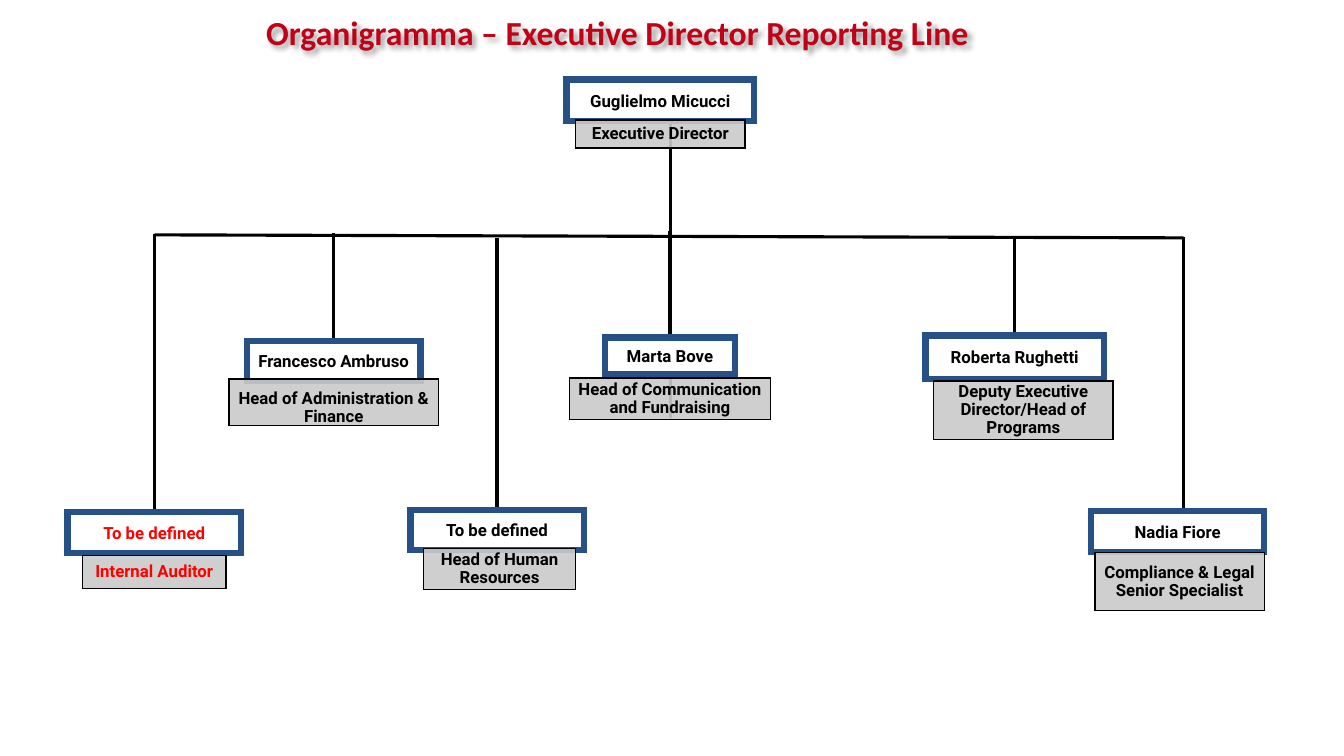
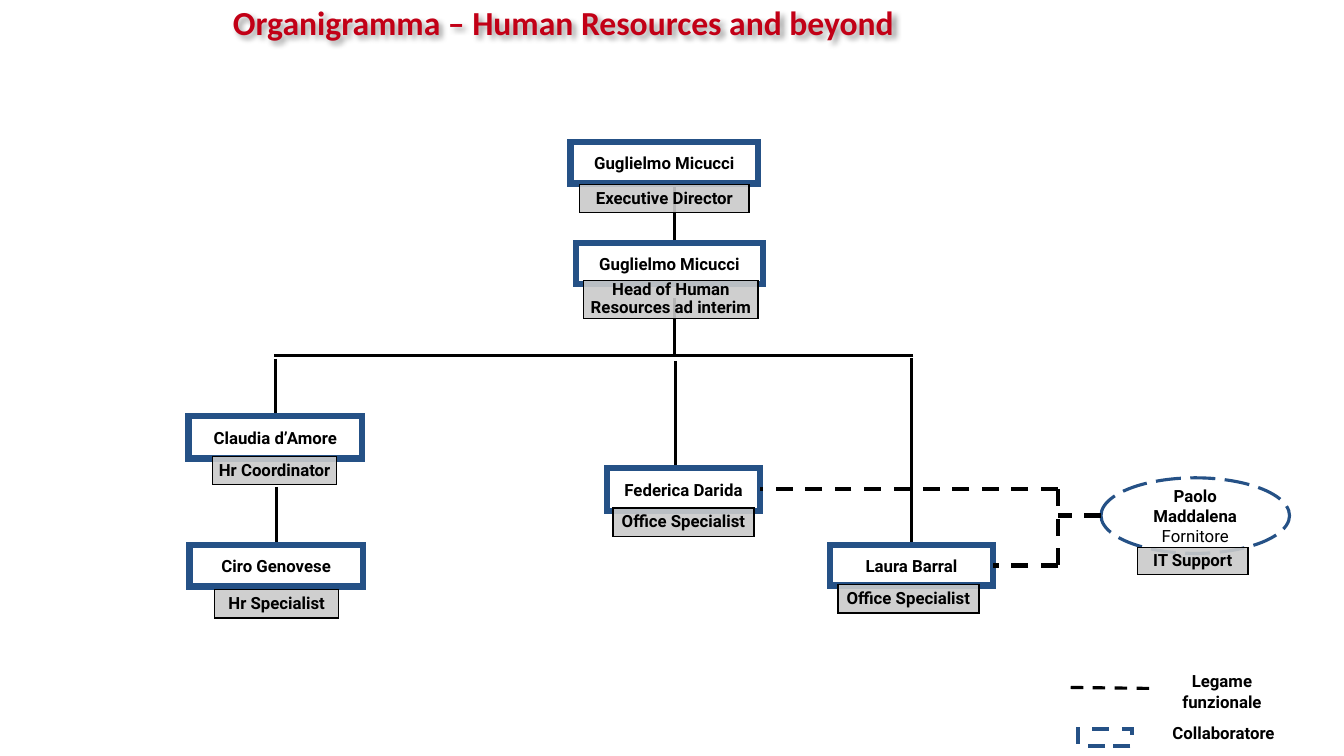
from lxml.etree import SubElement
from pptx import Presentation
from pptx.dml.color import RGBColor
from pptx.enum.dml import MSO_LINE as Dash
from pptx.enum.shapes import MSO_CONNECTOR as Connector, MSO_SHAPE as Preset
from pptx.enum.text import MSO_ANCHOR as Anchor, MSO_AUTO_SIZE as AutoSize, PP_ALIGN as Align
from pptx.oxml.ns import qn
from pptx.util import Inches, Pt

# Shared style
RED = RGBColor(0xC2, 0x00, 0x16)
ALERT = RGBColor(0xFF, 0x00, 0x00)
BLUE = RGBColor(0x25, 0x51, 0x86)
GREY = RGBColor(0xCA, 0xCA, 0xCA)
BLACK = RGBColor(0x00, 0x00, 0x00)
WHITE = RGBColor(0xFF, 0xFF, 0xFF)
TITLE_FONT, BODY_FONT = "Calibri", "Roboto"
TOP, RIGHT = 0, 3
CENTRED = 0.04  # a drop this close to a box's middle is joined to it

# Content: cards are (name, name box, role, role box); boxes are left, top, width, height.
# Drops are key: (x, start y) and run down to the card's top.
DIRECTOR_PAGE = {
    "title": ("Organigramma – Executive Director Reporting Line", (2.54, 0.09, 10, 0.5)),
    "cards": {
        "director": ("Guglielmo Micucci", (5.62, 0.79, 1.86, 0.41),
                     "Executive Director", (5.71, 1.19, 1.68, 0.28)),
        "auditor": ("To be defined", (0.67, 5.08, 1.72, 0.41),
                    "Internal Auditor", (0.82, 5.51, 1.42, 0.33)),
        "finance": ("Francesco Ambruso", (2.45, 3.38, 1.72, 0.4),
                    "Head of Administration & Finance", (2.27, 3.76, 2.08, 0.46)),
        "people": ("To be defined", (4.07, 5.06, 1.72, 0.4),
                   "Head of Human Resources", (4.2, 5.44, 1.51, 0.41)),
        "communication": ("Marta Bove", (6, 3.35, 1.29, 0.36),
                          "Head of Communication and Fundraising", (5.65, 3.75, 1.99, 0.41)),
        "programs": ("Roberta Rughetti", (9.18, 3.33, 1.77, 0.43),
                     "Deputy Executive Director/Head of Programs", (9.26, 3.78, 1.78, 0.58)),
        "compliance": ("Nadia Fiore", (10.82, 5.07, 1.72, 0.41),
                       "Compliance & Legal Senior Specialist", (10.86, 5.48, 1.68, 0.58)),
    },
    "alerts": ("auditor",),
    "lines": [(6.65, 1.2, 6.65, 2.36), (11.74, 2.36, 1.53, 2.33), (6.65, 3.71, 6.65, 4.15)],
    "drops": {"auditor": (1.53, 2.32), "finance": (3.29, 2.31), "people": (4.91, 2.36),
              "communication": (6.65, 2.29), "programs": (10.1, 2.36),
              "compliance": (11.74, 2.35)},
}
PEOPLE_PAGE = {
    "title": ("Organigramma – Human Resources and beyond", (2.21, -0.01, 8.28, 0.5)),
    "cards": {
        "director": ("Guglielmo Micucci", (5.66, 1.41, 1.86, 0.41),
                     "Executive Director", (5.75, 1.83, 1.68, 0.28)),
        "head": ("Guglielmo Micucci", (5.71, 2.41, 1.86, 0.41),
                 "Head of Human Resources ad interim", (5.79, 2.78, 1.73, 0.38)),
        "coordinator": ("Claudia d’Amore", (1.87, 4.13, 1.72, 0.42),
                        "Hr Coordinator", (2.11, 4.53, 1.23, 0.28)),
        "specialist": ("Ciro Genovese", (1.88, 5.41, 1.72, 0.41),
                       "Hr Specialist", (2.13, 5.85, 1.23, 0.28)),
        "office": ("Federica Darida", (6.02, 4.64, 1.52, 0.43),
                   "Office Specialist", (6.08, 5.04, 1.4, 0.28)),
        "second office": ("Laura Barral", (8.23, 5.41, 1.62, 0.4),
                          "Office Specialist", (8.31, 5.8, 1.4, 0.28)),
    },
    "alerts": (),
    "lines": [(9.06, 3.53, 2.72, 3.53), (6.69, 2.96, 6.69, 3.52)],
    "drops": {"head": (6.69, 1.82), "coordinator": (2.73, 3.56), "specialist": (2.72, 4.83),
              "office": (6.7, 3.58), "second office": (9.06, 3.55)},
}
SUPPORT = (["Paolo Maddalena", "Fornitore"], (10.92, 4.74, 1.87, 0.75),
           "IT Support", (11.28, 5.43, 1.1, 0.27))
SUPPORT_BUS = 10.49
LEGEND = [("Legame funzionale", (11.57, 6.61, 1.1, 0.5)),
          ("Collaboratore", (11.49, 7.12, 1.29, 0.3))]


def inches(values):
    return [Inches(value) for value in values]


def write(shape, texts, colour=BLACK, margins=(0.1, 0.05), spacing=None, anchor=Anchor.MIDDLE):
    frame = shape.text_frame
    frame.word_wrap = True
    frame.vertical_anchor = anchor
    frame.margin_left = frame.margin_right = Inches(margins[0])
    frame.margin_top = frame.margin_bottom = Inches(margins[1])
    for number, text in enumerate(texts):
        para = frame.add_paragraph() if number else frame.paragraphs[0]
        para.text = text
        para.alignment = Align.CENTER
        para.line_spacing = spacing
        font = para.font
        font.name, font.size, font.bold = BODY_FONT, Pt(12), number == 0
        font.color.rgb = colour


def add_box(page, place, fill, line, width, preset=Preset.RECTANGLE, dash=None):
    box = page.shapes.add_shape(preset, *inches(place))
    box.shadow.inherit = False
    box.fill.solid()
    box.fill.fore_color.rgb = fill
    box.line.color.rgb = line
    box.line.width = Pt(width)
    if dash:
        box.line.dash_style = dash
    SubElement(box.element.spPr.find(qn("a:ln")), qn("a:miter"), lim="800000")
    return box


def add_line(page, ends, width=2.25, dash=None):
    line = page.shapes.add_connector(Connector.STRAIGHT, *inches(ends))
    line.line.color.rgb = BLACK
    line.line.width = Pt(width)
    if dash:
        line.line.dash_style = dash
    SubElement(line.element.spPr, qn("a:effectLst"))
    return line


def add_role(page, text, place, colour=BLACK):
    box = add_box(page, place, GREY, BLACK, 1)
    tint = box.element.spPr.find(qn("a:solidFill")).find(qn("a:srgbClr"))
    SubElement(tint, qn("a:alpha"), val="90000")
    write(box, [text], colour, (0.03, 0.01), 0.9)
    return box


def add_title(page, text, place):
    title = page.shapes.title
    title.left, title.top, title.width, title.height = inches(place)
    frame = title.text_frame
    frame.text = text
    frame.auto_size = AutoSize.NONE
    frame.vertical_anchor = Anchor.MIDDLE
    para = frame.paragraphs[0]
    para.alignment, para.line_spacing = Align.LEFT, 0.9
    font = para.font
    font.name, font.size, font.bold = TITLE_FONT, Pt(24), True
    font.color.rgb = RED
    # Soft shadow behind the words
    effects = SubElement(title.element.spPr, qn("a:effectLst"))
    shadow = SubElement(effects, qn("a:outerShdw"), blurRad="50800", dist="38100",
                        dir="2700000", algn="tl", rotWithShape="0")
    tint = SubElement(shadow, qn("a:srgbClr"), val=str(BLACK))
    SubElement(tint, qn("a:alpha"), val="40000")


def add_chart_page(deck, content):
    """Draw lines, then cards over them, then join the centred drops."""
    page = deck.slides.add_slide(deck.slide_layouts[5])
    add_title(page, *content["title"])
    cards = content["cards"]
    for ends in content["lines"]:
        add_line(page, ends)

    joins = {}
    for key, (x, start) in content["drops"].items():
        left, top, width, _ = cards[key][1]
        centre = left + width / 2
        joined = abs(x - centre) <= CENTRED
        x = centre if joined else x
        drop = add_line(page, (x, start, x, top))
        if joined:
            joins[key] = drop

    names, roles = {}, {}
    for key, (name, place, role, role_place) in cards.items():
        colour = ALERT if key in content["alerts"] else BLACK
        names[key] = add_box(page, place, WHITE, BLUE, 4.5)
        write(names[key], [name], colour)
        roles[key] = add_role(page, role, role_place, colour)
    for key, drop in joins.items():
        drop.end_connect(names[key], TOP)
    return page, names, roles


def add_support(page, names):
    """External support, its dashed links and the legend."""
    people, place, role, role_place = SUPPORT
    oval = add_box(page, place, WHITE, BLUE, 2.25, Preset.OVAL, Dash.LONG_DASH)
    write(oval, people)
    add_role(page, role, role_place)

    levels = []
    for key in ("office", "second office"):
        left, top, width, height = PEOPLE_PAGE["cards"][key][1]
        level = top + height / 2
        levels.append(level)
        link = add_line(page, (SUPPORT_BUS, level, left + width, level), 3, Dash.DASH)
        link.end_connect(names[key], RIGHT)
    middle = place[1] + place[3] / 2
    add_line(page, (SUPPORT_BUS, levels[0], SUPPORT_BUS, levels[1]), 3, Dash.DASH)
    add_line(page, (place[0], middle, SUPPORT_BUS, middle), 3, Dash.DASH)

    # Legend
    add_line(page, (10.62, 6.82, 11.44, 6.83), dash=Dash.DASH)
    add_box(page, (10.69, 7.23, 0.54, 0.17), WHITE, BLUE, 3, dash=Dash.DASH)
    for text, label_place in LEGEND:
        label = page.shapes.add_textbox(*inches(label_place))
        write(label, [text], anchor=Anchor.TOP)


def main():
    deck = Presentation()
    deck.slide_width, deck.slide_height = Inches(13.33), Inches(7.5)
    _, _, roles = add_chart_page(deck, DIRECTOR_PAGE)
    roles["finance"].text_frame.margin_top = Inches(0.13)
    page, names, _ = add_chart_page(deck, PEOPLE_PAGE)
    add_support(page, names)
    deck.save("out.pptx")


if __name__ == "__main__":
    main()
